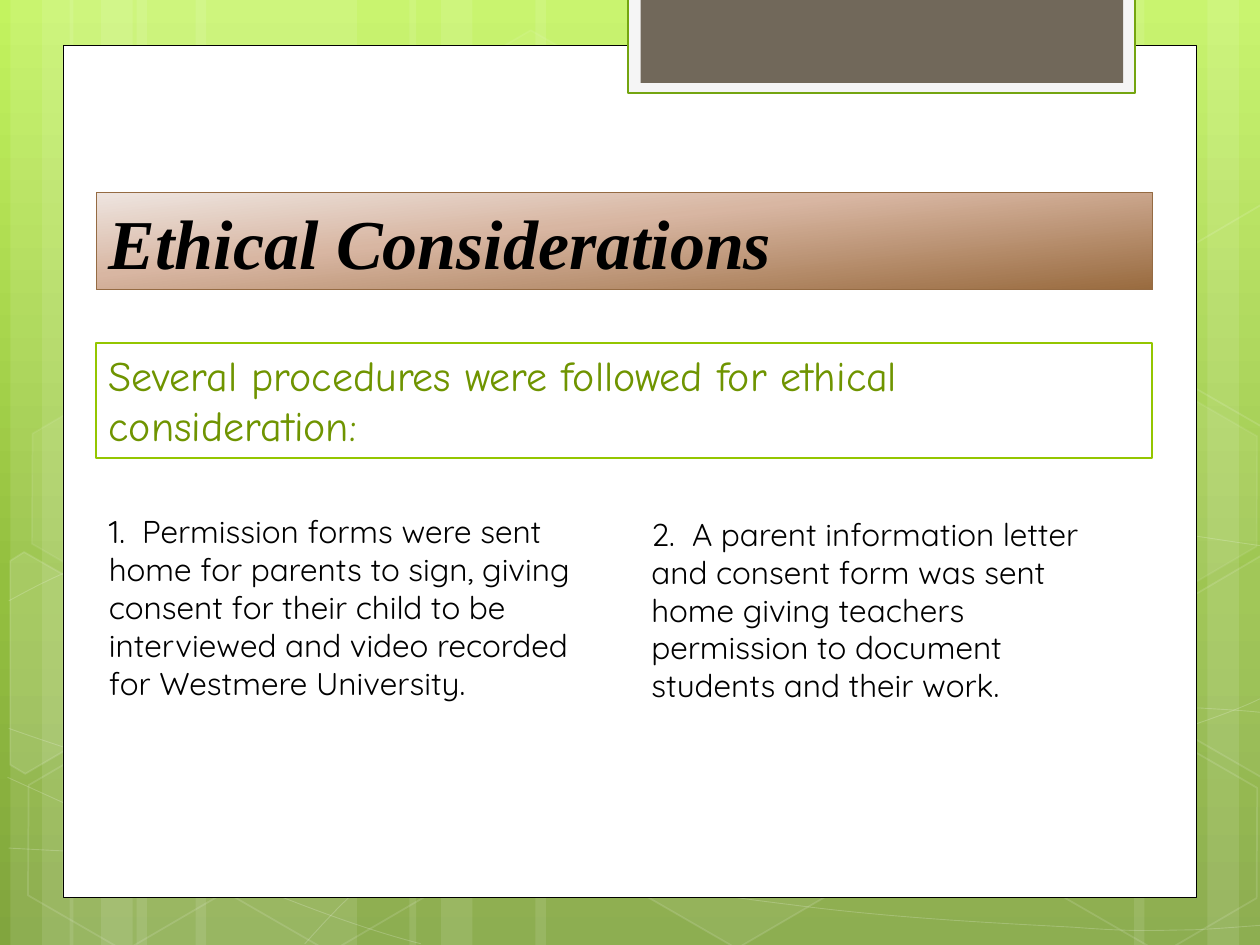
from copy import deepcopy
from math import cos, radians, sin

from lxml import etree
from pptx import Presentation
from pptx.dml.color import RGBColor
from pptx.enum.shapes import MSO_SHAPE
from pptx.enum.text import MSO_ANCHOR, MSO_AUTO_SIZE, PP_ALIGN
from pptx.oxml.ns import qn
from pptx.util import Pt

RECTANGLE, HEXAGON = MSO_SHAPE.RECTANGLE, MSO_SHAPE.HEXAGON
TOP, MIDDLE = MSO_ANCHOR.TOP, MSO_ANCHOR.MIDDLE
LEFT, NO_AUTOFIT = PP_ALIGN.LEFT, MSO_AUTO_SIZE.NONE
TWO_CONTENT = 3
SLIDE_WIDTH, SLIDE_HEIGHT = 720, 540
WHITE, BLACK = "FFFFFF", "000000"

TITLE = "Ethical Considerations"
LEAD = "Several procedures were followed for ethical consideration:"
PROCEDURES = [
    ("1.  Permission forms were sent home for parents to sign, giving consent for "
     "their child to be interviewed and video recorded for Westmere University.",
     (55, 289.2, 293, 138.2)),
    ("2.  A parent information letter and consent form was sent home giving teachers "
     "permission to document students and their work.",
     (365, 290.7, 285.1, 116.6)),
]
TITLE_BOX = (55, 109.9, 603.4, 55.7)
LEAD_BOX = (55, 196, 603.4, 65.7)

BACKGROUND_STOPS = [(0, "C3F35F"), (0.62, "93BF3F"), (1, "81A53E")]
TITLE_STOPS = [(0, "EEE5E0"), (0.4, "D8B6A2"), (1, "996B3F")]

STRIPE_GROUP = [(78, 126), (6, 36), (24, 60)]
STRIPES = (STRIPE_GROUP + [(left + 33.8, width) for left, width in STRIPE_GROUP]
           + [(528, 126), (690, 36), (648, 60), (306, 222), (234, 36), (252, 60)])

CURVES = [
    [(5, 484.6), (43.9, 486.7, 82.8, 488.9, 136.8, 488.2),
     (190.8, 487.4, 257.8, 486, 329.8, 478.8), (401.8, 471.6, 504, 457.9, 570.2, 444.2),
     (635.8, 430.6, 703.4, 409, 725, 396.7)],
    [(5, 343.4), (25.9, 331.9, 46.8, 321.1, 87.1, 310.3),
     (128.2, 299.5, 186.5, 283.7, 249.8, 278.6), (313.9, 273.6, 391.7, 272.9, 470.9, 278.6),
     (550.1, 284.4, 681.8, 306.7, 725, 312.5)],
    [(4.3, 444.2), (91.4, 483.8, 177.8, 523.4, 240.5, 539.3)],
    [(5, 416.2), (27.4, 424.1, 50.4, 432, 92.2, 443.5),
     (133.9, 454.3, 196.6, 472.3, 257, 484.6), (316.8, 496.8, 392.4, 509.8, 452.2, 517),
     (511.9, 524.9, 576, 527.8, 614.2, 529.9), (651.6, 532.8, 661.7, 531.4, 680.4, 531.4),
     (699.1, 530.6, 712.1, 529.2, 725, 528.5)],
    [(174.2, 539.3), (187.2, 524.9, 200.2, 510.5, 217.4, 497.5),
     (234.7, 484.6, 259.2, 470.2, 279.4, 460.1), (299.5, 450, 311.8, 445.7, 338.4, 438.5),
     (364.3, 431.3, 412.6, 421.2, 437.8, 416.2), (463.7, 411.1, 467.3, 411.1, 489.6, 409.7),
     (511.9, 407.5, 547.2, 405.4, 571.7, 404.6), (596.9, 403.9, 637.9, 404.6, 637.9, 404.6),
     (686.2, 404.6), (699.1, 405.4, 711.4, 406.1, 717.8, 406.8),
     (724.3, 407.5, 722.2, 406.8, 724.3, 407.5)],
]

TILT = 30
HEXAGON_SIZE = (126, 109.4)
HEXAGONS = [
    (240.5, 25.9, 4, 8), (357.8, 424.1, 6, 12), (7.9, 425.5, None, 12),
    (10.1, 224.6, 7, 8), (125.3, 426.2, None, 12), (542.2, 326.2, 10, 12),
    (600.5, 427, None, 12), (600.5, 226.1, 7, 8),
]
LEFT_CUT = [(5.8, 320.4), (13.7, 315.4), (69.1, 347), (68.4, 410.4), (14.4, 442.1), (5.8, 437)]
RIGHT_CUT = [(666.7, 349.2), (720.7, 317.5), (726.5, 321.1), (726.5, 441.4),
             (721.4, 444.2), (666.7, 412.6)]
CUT_HEXAGONS = [
    (LEFT_CUT, (25.9, 385.2), 10),
    (RIGHT_CUT, (709.2, 374.4), 4),
    ([(x, y - 200.5) for x, y in RIGHT_CUT], (709.2, 173.9), None),
]

PANELS = [
    ((36, 25.9, 648, 487), WHITE, (BLACK, 0.5)),
    ((359, -1.4, 289.7, 54.7), "F5F5F5", ("74A510", 1.25)),
    ((366.1, -1.4, 275.8, 48.8), "71685A", None),
]


def set_color(color_format, color):
    color_format.rgb = RGBColor.from_string(color)


def set_opacity(fill_element, opacity):
    if opacity < 100:
        color = fill_element.find(".//" + qn("a:srgbClr"))
        etree.SubElement(color, qn("a:alpha")).set("val", str(opacity * 1000))


def paint(shape, fill=None, line=None, fill_opacity=100, line_opacity=100):
    properties = shape.element.spPr
    if fill:
        shape.fill.solid()
        set_color(shape.fill.fore_color, fill)
        set_opacity(properties.find(qn("a:solidFill")), fill_opacity)
    else:
        shape.fill.background()
    if line:
        color, width = line
        set_color(shape.line.color, color)
        shape.line.width = Pt(width)
        set_opacity(properties.find(qn("a:ln")), line_opacity)
    else:
        shape.line.fill.background()


def paint_gradient(fill, element, stops, clockwise_angle):
    fill.gradient()
    fill.gradient_angle = 360 - clockwise_angle
    stop_list = element.find(".//" + qn("a:gsLst"))
    stop_list.append(deepcopy(stop_list[0]))
    for stop, (position, color) in zip(fill.gradient_stops, stops):
        stop.position = position
        set_color(stop.color, color)


def place(shape, box):
    shape.left, shape.top, shape.width, shape.height = map(Pt, box)


def add_box(slide, kind, box):
    shape = slide.shapes.add_shape(kind, *map(Pt, box))
    shape.shadow.inherit = False
    return shape


def add_outline(slide, points, close):
    start, *rest = [(Pt(x), Pt(y)) for x, y in points]
    builder = slide.shapes.build_freeform(*start)
    builder.add_line_segments(rest, close=close)
    shape = builder.convert_to_shape()
    shape.shadow.inherit = False
    return shape


def add_curve(slide, segments):
    points = [pair for segment in segments for pair in zip(segment[::2], segment[1::2])]
    shape = add_outline(slide, points, False)
    lines = iter(shape.element.findall(".//" + qn("a:lnTo")))
    for segment in segments[1:]:
        first = next(lines)
        if len(segment) == 6:
            first.tag = qn("a:cubicBezTo")
            for line in (next(lines), next(lines)):
                first.append(line[0])
                line.getparent().remove(line)
    return shape


def add_cut_hexagon(slide, points, center):
    center_x, center_y = center
    cosine, sine = cos(radians(TILT)), sin(radians(TILT))
    level_points = [(center_x + (x - center_x) * cosine + (y - center_y) * sine,
                     center_y - (x - center_x) * sine + (y - center_y) * cosine)
                    for x, y in points]
    shape = add_outline(slide, level_points, True)
    shape.rotation = TILT
    return shape


def write(shape, text, font_name, size, color, anchor=TOP, emphasis=False):
    frame = shape.text_frame
    frame.word_wrap = True
    frame.auto_size = NO_AUTOFIT
    frame.vertical_anchor = anchor
    paragraph = frame.paragraphs[0]
    paragraph.alignment = LEFT
    paragraph.space_before = Pt(0)
    properties = paragraph._p.get_or_add_pPr()
    properties.set("marL", "0")
    properties.set("indent", "0")
    etree.SubElement(properties, qn("a:buNone"))
    run = paragraph.add_run()
    run.text = text
    run.font.name = font_name
    run.font.size = Pt(size)
    run.font.bold = run.font.italic = emphasis
    set_color(run.font.color, color)


def add_backdrop(slide):
    paint_gradient(slide.background.fill, slide.element, BACKGROUND_STOPS, 90)
    for left, width in STRIPES:
        paint(add_box(slide, RECTANGLE, (left, 0, width, SLIDE_HEIGHT)), WHITE, fill_opacity=10)
    for segments in CURVES:
        paint(add_curve(slide, segments), line=(WHITE, 0.5), line_opacity=20)
    for left, top, fill_opacity, line_opacity in HEXAGONS:
        hexagon = add_box(slide, HEXAGON, (left, top, *HEXAGON_SIZE))
        hexagon.adjustments[0] = 0.285
        hexagon.rotation = TILT
        paint(hexagon, fill_opacity and WHITE, (WHITE, 1), fill_opacity, line_opacity)
    for points, center, fill_opacity in CUT_HEXAGONS:
        paint(add_cut_hexagon(slide, points, center), fill_opacity and WHITE, (WHITE, 1),
              fill_opacity, 12)
    for box, fill, line in PANELS:
        paint(add_box(slide, RECTANGLE, box), fill, line)


def add_content(slide):
    title, *columns = slide.placeholders
    columns, unused = columns[:2], columns[2:]
    place(title, TITLE_BOX)
    paint(title, line=("956B43", 0.75))
    paint_gradient(title.fill, title.element, TITLE_STOPS, 84)
    write(title, TITLE, "Times New Roman", 40, BLACK, MIDDLE, True)
    lead = add_box(slide, RECTANGLE, LEAD_BOX)
    paint(lead, WHITE, ("94C600", 1.25))
    write(lead, LEAD, "Comic Neue", 24, "6F9400")
    for column, (text, box) in zip(columns, PROCEDURES):
        place(column, box)
        write(column, text, "Quicksand", 18, BLACK)
    for shape in (title, lead, *columns):
        slide.shapes.element.append(shape.element)
    for placeholder in unused:
        slide.shapes.element.remove(placeholder.element)


def main():
    presentation = Presentation()
    presentation.slide_width, presentation.slide_height = Pt(SLIDE_WIDTH), Pt(SLIDE_HEIGHT)
    slide = presentation.slides.add_slide(presentation.slide_layouts[TWO_CONTENT])
    add_backdrop(slide)
    add_content(slide)
    presentation.save("out.pptx")


if __name__ == "__main__":
    main()
